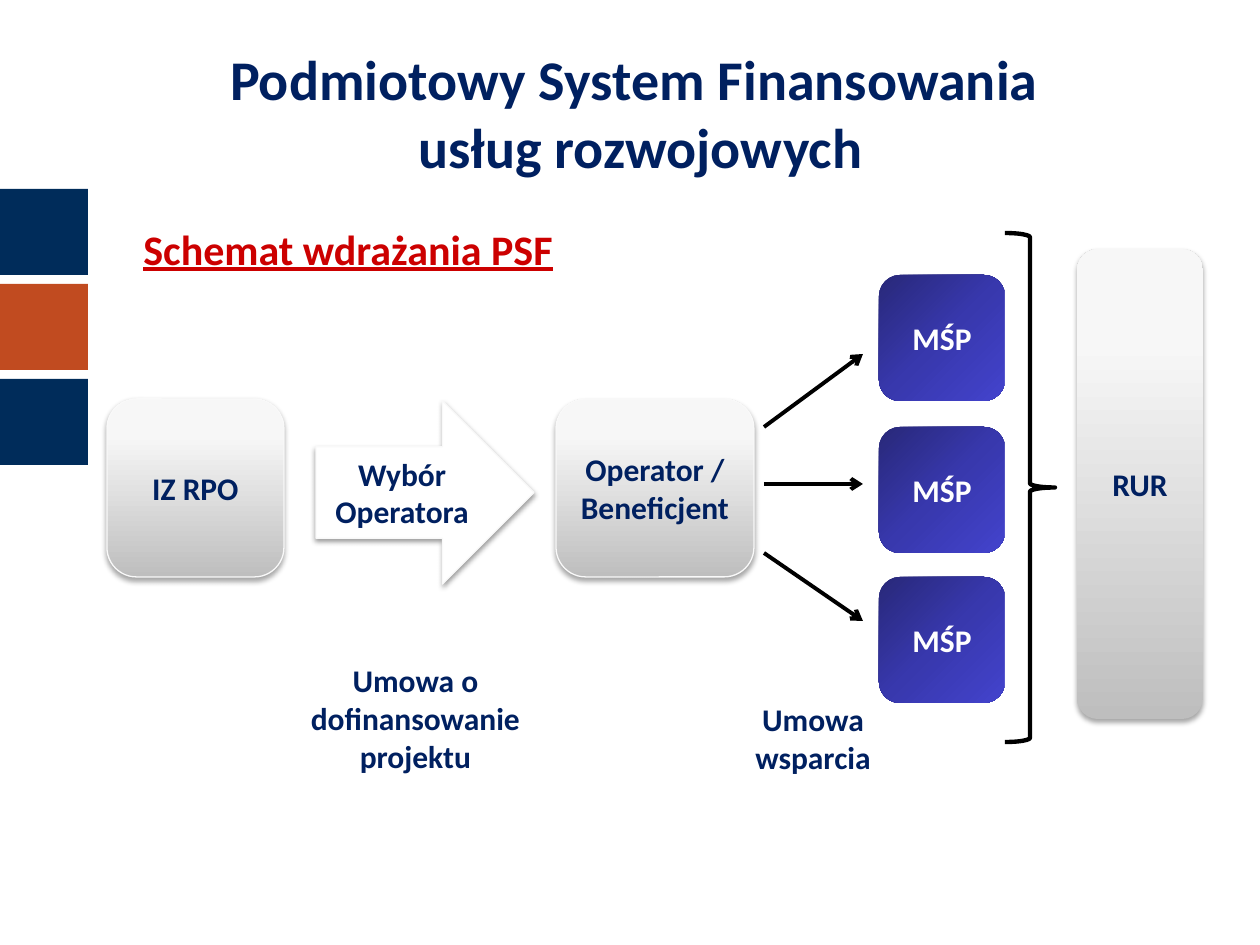
from lxml import etree
from pptx import Presentation
from pptx.dml.color import RGBColor
from pptx.enum.shapes import MSO_CONNECTOR, MSO_SHAPE
from pptx.enum.text import MSO_ANCHOR, MSO_AUTO_SIZE, PP_ALIGN
from pptx.oxml.ns import qn
from pptx.util import Emu, Pt

RECTANGLE = MSO_SHAPE.RECTANGLE
ROUNDED = MSO_SHAPE.ROUNDED_RECTANGLE
RIGHT_ARROW = MSO_SHAPE.RIGHT_ARROW
RIGHT_BRACE = MSO_SHAPE.RIGHT_BRACE
STRAIGHT = MSO_CONNECTOR.STRAIGHT
TOP, MIDDLE = MSO_ANCHOR.TOP, MSO_ANCHOR.MIDDLE
LEFT, CENTER = PP_ALIGN.LEFT, PP_ALIGN.CENTER
FIT_SHAPE = MSO_AUTO_SIZE.SHAPE_TO_FIT_TEXT

EMU_PER_PX = 914400 / 126
FONT = "Calibri"
NAVY, WHITE, BLACK, RED = "002060", "FFFFFF", "000000", "CC0000"
BAND_BLUE, BAND_ORANGE, EDGE = "002C5A", "C14B20", "F9F9F9"
SILVER = ([(0, "BEBEBE"), (80, "F7F7F7"), (100, "F8F8F8")], 270)
INDIGO = ([(0, "282879"), (50, "3838AD"), (100, "4343CD")], 45)


def px(length):
    return Emu(round(length * EMU_PER_PX))


def color(hex_value):
    return RGBColor.from_string(hex_value)


def child(parent, tag, **attributes):
    element = etree.SubElement(parent, qn(tag))
    for key, value in attributes.items():
        element.set(key, str(value))
    return element


class Diagram:
    def __init__(self, slide):
        self.slide = slide

    def set_text(self, frame, lines, size=18, ink=NAVY, align=CENTER,
                 anchor=MIDDLE, underline=None):
        frame.word_wrap = True
        frame.vertical_anchor = anchor
        for index, line in enumerate(lines):
            paragraph = frame.add_paragraph() if index else frame.paragraphs[0]
            paragraph.text = line
            paragraph.alignment = align
            font = paragraph.font
            font.name, font.size, font.bold = FONT, Pt(size), True
            font.underline = underline
            font.color.rgb = color(ink)

    def paint_gradient(self, shape, gradient):
        stops, angle = gradient
        shape.fill.gradient()
        shape.fill.gradient_angle = 360 - angle
        stop_list = shape.element.spPr.find(qn("a:gradFill")).find(qn("a:gsLst"))
        stop_list.clear()
        for position, hex_value in stops:
            stop = child(stop_list, "a:gs", pos=position * 1000)
            child(stop, "a:srgbClr", val=hex_value)

    def cast_shadow(self, shape, opacity, distance):
        effects = shape.element.spPr.find(qn("a:effectLst"))
        shadow = child(effects, "a:outerShdw", blurRad=Pt(3.1),
                       dist=Pt(distance), dir=90 * 60000, rotWithShape=0)
        tint = child(shadow, "a:srgbClr", val=BLACK)
        child(tint, "a:alpha", val=opacity * 1000)

    def shape(self, kind, box, fill, lines=(), ink=NAVY, outline=None,
              weight=0.75, shadow=None):
        shape = self.slide.shapes.add_shape(kind, *map(px, box))
        shape.shadow.inherit = False
        if isinstance(fill, str):
            shape.fill.solid()
            shape.fill.fore_color.rgb = color(fill)
        else:
            self.paint_gradient(shape, fill)
        if outline:
            shape.line.color.rgb = color(outline)
            shape.line.width = Pt(weight)
        else:
            shape.line.fill.background()
        if shadow:
            self.cast_shadow(shape, *shadow)
        self.set_text(shape.text_frame, lines, ink=ink)

    def label(self, box, lines, **style):
        frame = self.slide.shapes.add_textbox(*map(px, box)).text_frame
        self.set_text(frame, lines, anchor=TOP, **style)
        frame.auto_size = FIT_SHAPE

    def title(self, box, lines):
        frame = self.slide.shapes.add_textbox(*map(px, box)).text_frame
        frame.margin_top = 0
        self.set_text(frame, lines, size=32, anchor=TOP)

    def arrow(self, start, end):
        connector = self.slide.shapes.add_connector(
            STRAIGHT, *map(px, start + end))
        connector.line.color.rgb = color(BLACK)
        connector.line.width = Pt(2.25)
        properties = connector.element.spPr
        child(properties.find(qn("a:ln")), "a:tailEnd", type="arrow")
        child(properties, "a:effectLst")


def main():
    deck = Presentation()
    deck.slide_width, deck.slide_height = px(1260), px(945)
    diagram = Diagram(deck.slides.add_slide(deck.slide_layouts[6]))

    for row, band in enumerate((BAND_BLUE, BAND_ORANGE, BAND_BLUE)):
        diagram.shape(RECTANGLE, (0, 189 + 95 * row, 88, 86), band)

    diagram.title((105, 45, 1071, 84),
                  ("Podmiotowy System Finansowania ", "usług rozwojowych"))

    silver_shadow = (35, 1.8)
    diagram.shape(ROUNDED, (107, 399, 177, 178), SILVER, ("IZ RPO",),
                  outline=EDGE, shadow=silver_shadow)
    diagram.shape(ROUNDED, (556, 399, 198, 178), SILVER,
                  ("Operator /", "Beneficjent"),
                  outline=EDGE, shadow=silver_shadow)
    for company_top in (275, 427, 577):
        diagram.shape(ROUNDED, (879, company_top, 126, 126), INDIGO,
                      ("MŚP",), ink=WHITE)
    diagram.shape(ROUNDED, (1077, 249, 126, 470), SILVER, ("RUR",),
                  shadow=silver_shadow)
    diagram.shape(RIGHT_ARROW, (316, 401, 218, 183), WHITE,
                  ("Wybór Operatora",), outline=EDGE, shadow=(38, 1.6))

    for start_y, end_y in ((553, 621), (484, 484), (427, 354)):
        diagram.arrow((764, start_y), (863, end_y))

    diagram.label((295, 655, 241, 127), ("Umowa o dofinansowanie projektu",))
    diagram.label((728, 694, 170, 89), ("Umowa wsparcia",))
    diagram.label((131, 217, 630, 63), ("Schemat wdrażania PSF",),
                  size=24, ink=RED, align=LEFT, underline=True)
    diagram.shape(RIGHT_BRACE, (1005, 233, 50, 509), WHITE,
                  outline=BLACK, weight=2.5)

    deck.save("out.pptx")


if __name__ == "__main__":
    main()
